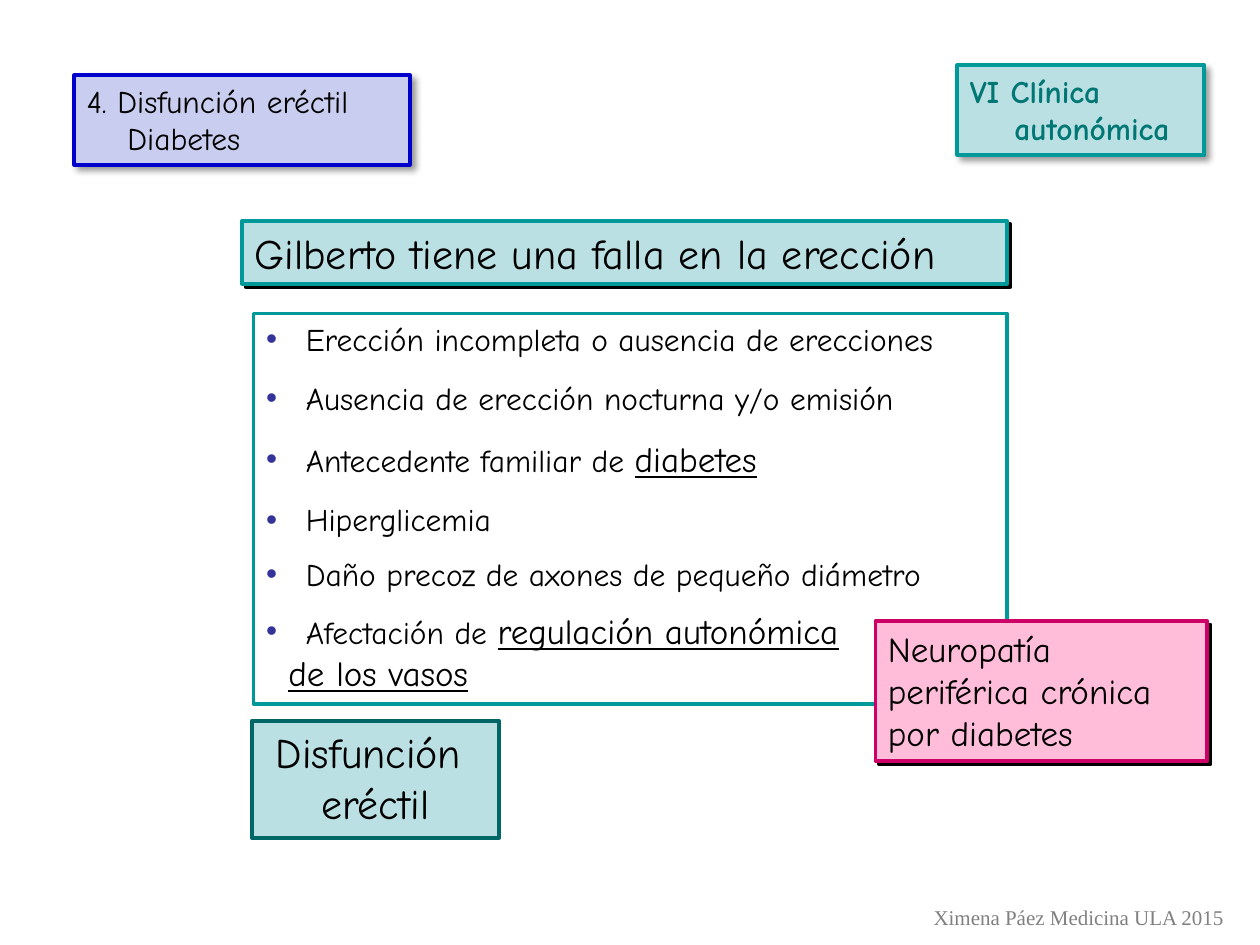
"""Build a slide on erectile dysfunction and diabetes."""
from lxml.etree import SubElement
from pptx import Presentation
from pptx.dml.color import RGBColor
from pptx.enum.shapes import MSO_SHAPE
from pptx.enum.text import MSO_ANCHOR, MSO_AUTO_SIZE, PP_ALIGN
from pptx.oxml.ns import qn
from pptx.util import Cm, Pt

BLACK = RGBColor(0x00, 0x00, 0x00)
GRAY = RGBColor(0x80, 0x80, 0x80)
TEAL = RGBColor(0x00, 0x99, 0x99)
DARK_TEAL = RGBColor(0x00, 0x66, 0x66)
TEXT_TEAL = RGBColor(0x00, 0x77, 0x74)
PALE_TEAL = RGBColor(0xBB, 0xE0, 0xE3)
MAGENTA = RGBColor(0xCC, 0x00, 0x66)
PINK = RGBColor(0xFF, 0xBD, 0xD9)
BLUE = RGBColor(0x00, 0x00, 0xCC)
PALE_BLUE = RGBColor(0xC9, 0xCD, 0xEF)
BULLET_BLUE = RGBColor(0x33, 0x33, 0x99)
SOFT = (40, 4, 3)
HARD = (100, 0, 2.8)


def format_box(box, place, line, fill=None, shadow=None):
    box.left, box.top, box.width, box.height = [Cm(value) for value in place]
    box.line.color.rgb = line
    box.line.width = Pt(2.25)
    if fill is None:
        box.fill.background()
    else:
        box.fill.solid()
        box.fill.fore_color.rgb = fill
    box.shadow.inherit = False
    if shadow:
        alpha, blur, distance = shadow
        effects = box._element.spPr.find(qn("a:effectLst"))
        outer = SubElement(effects, qn("a:outerShdw"), blurRad=str(Pt(blur)),
                           dist=str(Pt(distance)), dir=str(45 * 60000),
                           algn="tl", rotWithShape="0")
        color = SubElement(outer, qn("a:srgbClr"), val=str(BLACK))
        SubElement(color, qn("a:alpha"), val=str(alpha * 1000))
    box.text_frame.word_wrap = True
    box.text_frame.auto_size = MSO_AUTO_SIZE.NONE
    box.text_frame.vertical_anchor = MSO_ANCHOR.TOP


def format_text(para, size, color=BLACK, bold=False, font="Comic Neue"):
    for span in para.runs:
        span.font.name = font
        span.font.size = Pt(size)
        span.font.bold = bold
        span.font.color.rgb = color


deck = Presentation()
deck.slide_width, deck.slide_height = Cm(25.4), Cm(19.05)
page = deck.slides.add_slide(deck.slide_layouts[1])

title = page.shapes.title
format_box(title, (4.88, 4.45, 15.42, 1.27), TEAL, PALE_TEAL, HARD)
title.text_frame.text = "Gilberto tiene una falla en la erección"
title.text_frame.paragraphs[0].alignment = PP_ALIGN.LEFT
format_text(title.text_frame.paragraphs[0], 24)

body = page.placeholders[1]
format_box(body, (5.11, 6.32, 15.19, 7.87), TEAL)
symptoms = [
    ("Erección incompleta o ausencia de erecciones", "", 0),
    ("Ausencia de erección nocturna y/o emisión", "", 12),
    ("Antecedente familiar de ", "diabetes", 12),
    ("Hiperglicemia", "", 12),
    ("Daño precoz de axones de pequeño diámetro", "", 9.7),
    ("Afectación de ", "regulación autonómica", 9.7),
    ("", "de los vasos", 0),
]
for index, (plain, underlined, gap) in enumerate(symptoms):
    para = body.text_frame.paragraphs[0] if index == 0 else body.text_frame.add_paragraph()
    para.text = plain
    format_text(para, 18)
    if underlined:
        span = para.add_run()
        span.text = underlined
        span.font.name = "Comic Neue"
        span.font.size = Pt(20)
        span.font.underline = True
        span.font.color.rgb = BLACK
    para.space_before = Pt(gap)
    properties = para._p.get_or_add_pPr()
    margin = Cm(0.8) if plain else Cm(0.45)
    properties.set("marL", str(margin))
    properties.set("indent", str(-margin if plain else 0))
    if plain:
        bullet_color = SubElement(properties, qn("a:buClr"))
        SubElement(bullet_color, qn("a:srgbClr"), val=str(BULLET_BLUE))
        SubElement(properties, qn("a:buChar"), char="•")
    else:
        SubElement(properties, qn("a:buNone"))

left, center = PP_ALIGN.LEFT, PP_ALIGN.CENTER
labels = [
    ((19.3, 1.32, 4.98, 1.8), TEAL, PALE_TEAL, SOFT,
     ["VI Clínica", "autonómica"], 18, TEXT_TEAL, True, left, 0.9),
    ((17.65, 12.52, 6.68, 2.82), MAGENTA, PINK, HARD,
     ["Neuropatía", "periférica crónica", "por diabetes"], 20, BLACK, False, left, 0),
    ((5.08, 14.53, 4.98, 2.36), DARK_TEAL, PALE_TEAL, None,
     ["Disfunción ", "eréctil"], 24, BLACK, False, center, 0),
    ((1.5, 1.52, 6.76, 1.8), BLUE, PALE_BLUE, SOFT,
     ["4. Disfunción eréctil", "Diabetes"], 18, BLACK, False, left, 0.82),
]
for place, line, fill, shadow, lines, size, color, bold, alignment, indent in labels:
    box = page.shapes.add_shape(MSO_SHAPE.RECTANGLE, *[Cm(value) for value in place])
    format_box(box, place, line, fill, shadow)
    box.text_frame.text = "\n".join(lines)
    for index, para in enumerate(box.text_frame.paragraphs):
        para.alignment = alignment
        format_text(para, size, color, bold)
        if index:
            para._p.get_or_add_pPr().set("marL", str(Cm(indent)))

credit = page.shapes.add_textbox(Cm(18.57), Cm(18.11), Cm(6.43), Cm(0.76))
credit.text_frame.word_wrap = False
credit.text_frame.text = "Ximena Páez Medicina ULA 2015"
format_text(credit.text_frame.paragraphs[0], 12, GRAY, font="Times New Roman")

deck.save("out.pptx")
